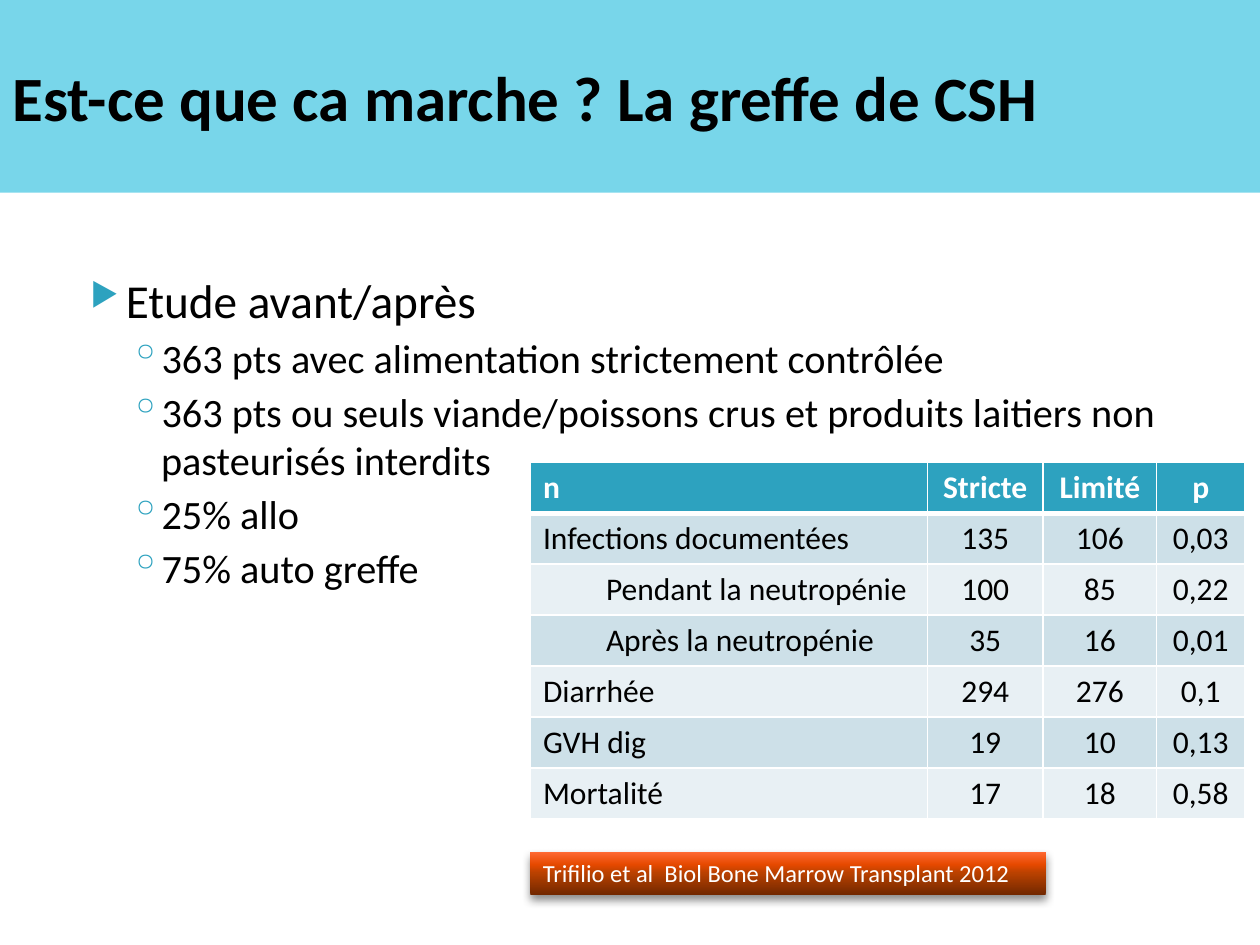
from lxml import etree
from pptx import Presentation
from pptx.dml.color import RGBColor
from pptx.enum.shapes import MSO_SHAPE
from pptx.enum.text import MSO_ANCHOR, PP_ALIGN
from pptx.oxml import parse_xml
from pptx.oxml.ns import qn
from pptx.util import Inches, Pt

RECT = MSO_SHAPE.RECTANGLE
MIDDLE = MSO_ANCHOR.MIDDLE
LEFT, CENTER = PP_ALIGN.LEFT, PP_ALIGN.CENTER
NS = 'xmlns:a="http://schemas.openxmlformats.org/drawingml/2006/main"'

BLACK = RGBColor(0, 0, 0)
WHITE = RGBColor(255, 255, 255)
TEAL = RGBColor(0x2D, 0xA2, 0xBF)
SKY = RGBColor(0x78, 0xD6, 0xEA)
BANDS = (RGBColor(0xCD, 0xE0, 0xE8), RGBColor(0xE8, 0xF0, 0xF4))
FLAME = (
    (0, RGBColor(0x73, 0x28, 0x00)),
    (50, RGBColor(0xB9, 0x41, 0x00)),
    (70, RGBColor(0xE6, 0x49, 0x00)),
    (100, RGBColor(0xFF, 0x69, 0x33)),
)

WIDE, HIGH = Inches(10), Inches(7.5)
EDGE = Inches(4.21)
COLS = (3.15, 0.92, 0.9, 0.7)
ROW = Inches(2.83 / 7)

HEAD = "Etude avant/après"
POINTS = (
    "363 pts avec alimentation strictement contrôlée",
    "363 pts ou seuls viande/poissons crus et produits laitiers non pasteurisés interdits",
    "25% allo",
    "75% auto greffe",
)
DATA = (
    ("n", "Stricte", "Limité", "p"),
    ("Infections documentées", "135", "106", "0,03"),
    ("Pendant la neutropénie", "100", "85", "0,22"),
    ("Après la neutropénie", "35", "16", "0,01"),
    ("Diarrhée", "294", "276", "0,1"),
    ("GVH dig", "19", "10", "0,13"),
    ("Mortalité", "17", "18", "0,58"),
)
NESTED = (2, 3)


def write(para, text, size, color, bold=False, align=LEFT):
    para.text = text
    para.alignment = align
    font = para.font
    font.name, font.size, font.bold = "Calibri", Pt(size), bold
    font.color.rgb = color


def indent(para, left, hang=0):
    props = para._p.get_or_add_pPr()
    props.set("marL", str(Inches(left)))
    props.set("indent", str(Inches(hang)))
    return props


def bullet(para, mark, left, hang, scale):
    props = indent(para, left, hang)
    tint = etree.SubElement(props, qn("a:buClr"))
    etree.SubElement(tint, qn("a:srgbClr"), val=str(TEAL))
    etree.SubElement(props, qn("a:buSzPct"), val=str(scale * 1000))
    etree.SubElement(props, qn("a:buChar"), char=mark)


def add_box(slide, left, top, width, height, text, size, color, bold=False):
    box = slide.shapes.add_shape(RECT, left, top, width, height)
    box.shadow.inherit = False
    box.line.fill.background()
    frame = box.text_frame
    frame.word_wrap = True
    frame.vertical_anchor = MIDDLE
    write(frame.paragraphs[0], text, size, color, bold)
    return box


def fill_flame(box):
    box.fill.background()
    stops = "".join(
        f'<a:gs pos="{pos * 1000}"><a:srgbClr val="{color}"/></a:gs>'
        for pos, color in FLAME
    )
    props = box._element.spPr
    props.replace(props.find(qn("a:noFill")), parse_xml(
        f'<a:gradFill {NS} rotWithShape="1"><a:gsLst>{stops}</a:gsLst>'
        '<a:lin ang="16200000" scaled="0"/></a:gradFill>'
    ))


def cast_shadow(box):
    box._element.spPr.find(qn("a:effectLst")).append(parse_xml(
        f'<a:outerShdw {NS} blurRad="{Pt(5)}" dist="{Pt(3)}" dir="5400000" '
        f'rotWithShape="0"><a:srgbClr val="{BLACK}"><a:alpha val="45000"/>'
        '</a:srgbClr></a:outerShdw>'
    ))


def add_list(slide):
    box = slide.shapes.add_textbox(WIDE * 0.05, HIGH * 0.28, WIDE * 0.9, HIGH * 0.6)
    frame = box.text_frame
    frame.word_wrap = True
    para = frame.paragraphs[0]
    write(para, HEAD, 27, BLACK)
    para.space_before = Pt(4)
    bullet(para, "▶", 0.4, -0.28, 68)
    for text in POINTS:
        para = frame.add_paragraph()
        para.level = 1
        write(para, text, 23, BLACK)
        para.space_before = Pt(3.2)
        bullet(para, "◦", 0.68, -0.25, 100)


def set_edges(cell, base):
    props = cell._tc.get_or_add_tcPr()
    for side, width in (("L", 1), ("R", 1), ("T", 1), ("B", base)):
        props.append(parse_xml(
            f'<a:ln{side} {NS} w="{Pt(width)}"><a:solidFill>'
            f'<a:srgbClr val="{WHITE}"/></a:solidFill></a:ln{side}>'
        ))


def add_grid(slide):
    frame = slide.shapes.add_table(
        len(DATA), len(COLS), EDGE, Inches(3.67), Inches(sum(COLS)), ROW * len(DATA)
    )
    table = frame.table
    for col, width in zip(table.columns, COLS):
        col.width = Inches(width)
    for r, line in enumerate(DATA):
        table.rows[r].height = ROW
        top = r == 0
        for c, text in enumerate(line):
            cell = table.cell(r, c)
            para = cell.text_frame.paragraphs[0]
            write(para, text, 18, WHITE if top else BLACK, top, CENTER if c else LEFT)
            if r in NESTED and c == 0:
                para.level = 1
                indent(para, 0.5)
            set_edges(cell, 3 if top or r == 0 else 1)
            cell.fill.solid()
            cell.fill.fore_color.rgb = TEAL if top else BANDS[(r - 1) % 2]


def main():
    deck = Presentation()
    deck.slide_width, deck.slide_height = WIDE, HIGH
    slide = deck.slides.add_slide(deck.slide_layouts[6])
    add_list(slide)
    title = add_box(slide, 0, 0, WIDE, Inches(1.53),
                    "Est-ce que ca marche ? La greffe de CSH", 36, BLACK, True)
    title.fill.solid()
    title.fill.fore_color.rgb = SKY
    source = add_box(slide, EDGE, Inches(6.76), Inches(4.09), Inches(0.34),
                     "Trifilio et al  Biol Bone Marrow Transplant 2012", 14, WHITE)
    fill_flame(source)
    cast_shadow(source)
    add_grid(slide)
    deck.save("out.pptx")


if __name__ == "__main__":
    main()
